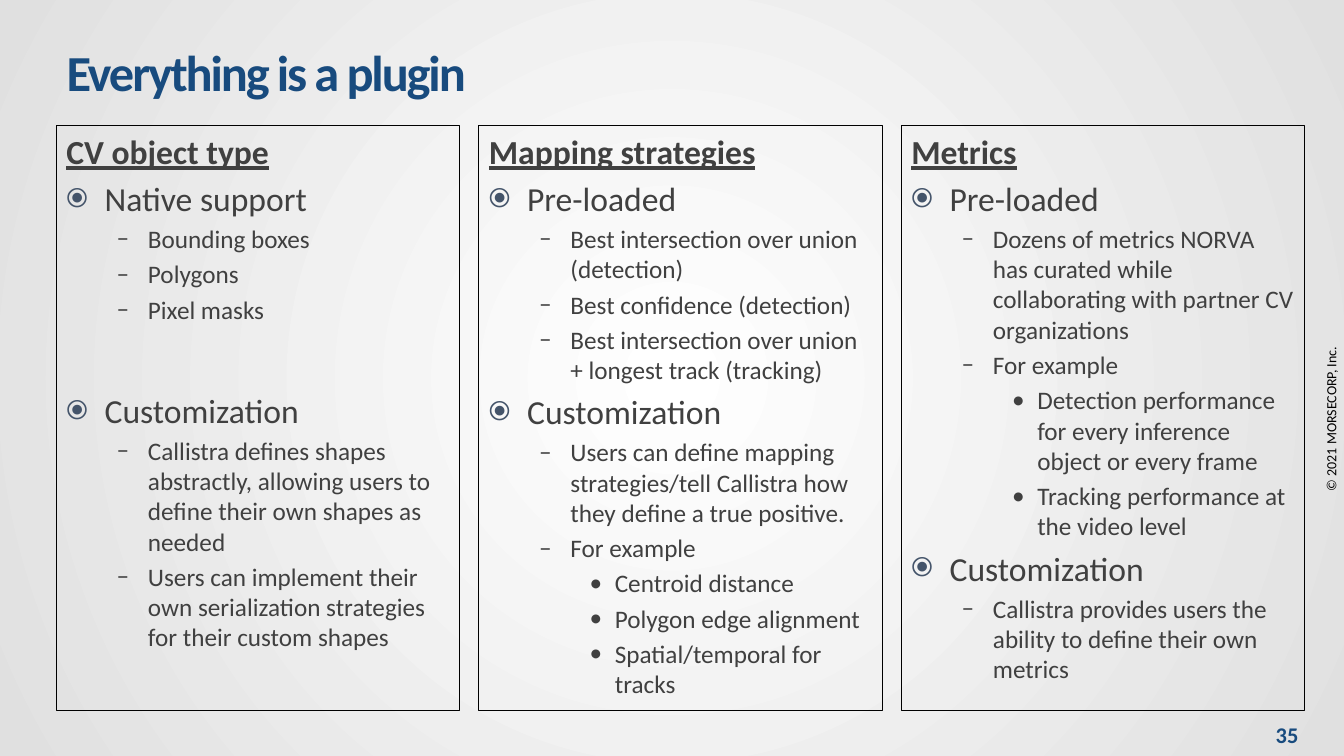
from pptx import Presentation
from pptx.dml.color import RGBColor
from pptx.enum.shapes import MSO_SHAPE
from pptx.enum.text import MSO_ANCHOR, PP_ALIGN
from pptx.oxml import parse_xml
from pptx.oxml.ns import nsdecls, qn
from pptx.util import Inches, Pt

RECTANGLE = MSO_SHAPE.RECTANGLE
TOP, MIDDLE = MSO_ANCHOR.TOP, MSO_ANCHOR.MIDDLE
LEFT, CENTER = PP_ALIGN.LEFT, PP_ALIGN.CENTER

NAVY, GRAY, BLACK = "184B7E", "404040", "000000"
HEADING, TOPIC, POINT, DETAIL = range(4)
SIZES = {HEADING: 24, TOPIC: 24, POINT: 18, DETAIL: 18}
BULLETS = {
    TOPIC: ("⦿", 0.38, 0.38),
    POINT: ("–", 0.81, 0.31),
    DETAIL: ("•", 1.25, 0.25),
}
TOPIC_BULLET_STYLE = (
    f'<a:buClr {nsdecls("a")}><a:srgbClr val="44546A"/></a:buClr>',
    f'<a:buSzPct {nsdecls("a")} val="80000"/>',
)
CUSTOMIZATION_GAP = 47

COLUMNS = [
    [
        (HEADING, "CV object type"),
        (TOPIC, "Native support"),
        (POINT, "Bounding boxes"),
        (POINT, "Polygons"),
        (POINT, "Pixel masks"),
        (TOPIC, "Customization"),
        (POINT, "Callistra defines shapes abstractly, allowing users to define their own shapes as needed"),
        (POINT, "Users can implement their own serialization strategies for their custom shapes"),
    ],
    [
        (HEADING, "Mapping strategies"),
        (TOPIC, "Pre-loaded"),
        (POINT, "Best intersection over union (detection)"),
        (POINT, "Best confidence (detection)"),
        (POINT, "Best intersection over union + longest track (tracking)"),
        (TOPIC, "Customization"),
        (POINT, "Users can define mapping strategies/tell Callistra how they define a true positive."),
        (POINT, "For example"),
        (DETAIL, "Centroid distance"),
        (DETAIL, "Polygon edge alignment"),
        (DETAIL, "Spatial/temporal for tracks"),
    ],
    [
        (HEADING, "Metrics"),
        (TOPIC, "Pre-loaded"),
        (POINT, "Dozens of metrics NORVA has curated while collaborating with partner CV organizations"),
        (POINT, "For example"),
        (DETAIL, "Detection performance for every inference object or every frame"),
        (DETAIL, "Tracking performance at the video level"),
        (TOPIC, "Customization"),
        (POINT, "Callistra provides users the ability to define their own metrics"),
    ],
]


def color(value):
    return RGBColor.from_string(value)


def add_span(para, text, size, ink, bold=False):
    span = para.add_run()
    span.text = text
    span.font.name = "Calibri"
    span.font.size = Pt(size)
    span.font.bold = bold
    span.font.color.rgb = color(ink)
    return span


deck = Presentation()
deck.slide_width, deck.slide_height = Inches(13.33), Inches(7.5)
page = deck.slides.add_slide(deck.slide_layouts[5])

backdrop = page.background.fill
backdrop.gradient()
for stop, (position, shade) in zip(backdrop.gradient_stops, [(0, "FFFFFF"), (1, "E0E0E0")]):
    stop.position = position
    stop.color.rgb = color(shade)
gradient = page.element.find(".//" + qn("a:gradFill"))
gradient.replace(
    gradient.find(qn("a:lin")),
    parse_xml(
        f'<a:path {nsdecls("a")} path="circle">'
        '<a:fillToRect l="50000" t="50000" r="50000" b="50000"/></a:path>'
    ),
)

title = page.shapes.title
title.left, title.top = Inches(0.56), Inches(0.33)
title.width, title.height = Inches(11.53), Inches(0.75)
title.text_frame.vertical_anchor = MIDDLE
title_para = title.text_frame.paragraphs[0]
title_para.alignment = LEFT
title_span = add_span(title_para, "Everything is a plugin", 36, NAVY, True)
title_span.font._element.set("spc", "-150")

for number, entries in enumerate(COLUMNS):
    box = page.shapes.add_shape(
        RECTANGLE, Inches(0.56 + 4.19 * number), Inches(1.25), Inches(4), Inches(5.8)
    )
    box.shadow.inherit = False
    box.fill.background()
    box.line.color.rgb = color(BLACK)
    box.line.width = Pt(0.75)
    frame = box.text_frame
    frame.word_wrap = True
    frame.vertical_anchor = TOP
    for level, text in entries:
        para = frame.paragraphs[0] if level == HEADING else frame.add_paragraph()
        para.alignment = LEFT
        if level != HEADING:
            glyph, margin, hanging = BULLETS[level]
            para.level = level - 1
            properties = para._p.get_or_add_pPr()
            properties.set("marL", str(Inches(margin)))
            properties.set("indent", str(-Inches(hanging)))
            if level == TOPIC:
                for style in TOPIC_BULLET_STYLE:
                    properties.append(parse_xml(style))
            properties.append(parse_xml(f'<a:buFont {nsdecls("a")} typeface="Calibri"/>'))
            properties.append(parse_xml(f'<a:buChar {nsdecls("a")} char="{glyph}"/>'))
            wide_gap = number == 0 and text == "Customization"
            para.space_before = Pt(CUSTOMIZATION_GAP if wide_gap else SIZES[level] * 0.2)
        span = add_span(para, text, SIZES[level], GRAY, level == HEADING)
        span.font.underline = level == HEADING

LABELS = [
    ("© 2021 MORSECORP, Inc.", 10.72, 4.02, 4.96, 0.27, 270, 10, BLACK, False),
    ("35", 12.52, 7.15, 0.49, 0.28, 0, 16, NAVY, True),
]
for text, left, top, width, height, turn, size, ink, bold in LABELS:
    label = page.shapes.add_textbox(Inches(left), Inches(top), Inches(width), Inches(height))
    label.rotation = turn
    label.text_frame.word_wrap = True
    label.text_frame.vertical_anchor = MIDDLE
    label_para = label.text_frame.paragraphs[0]
    label_para.alignment = CENTER
    add_span(label_para, text, size, ink, bold)

deck.save("out.pptx")
